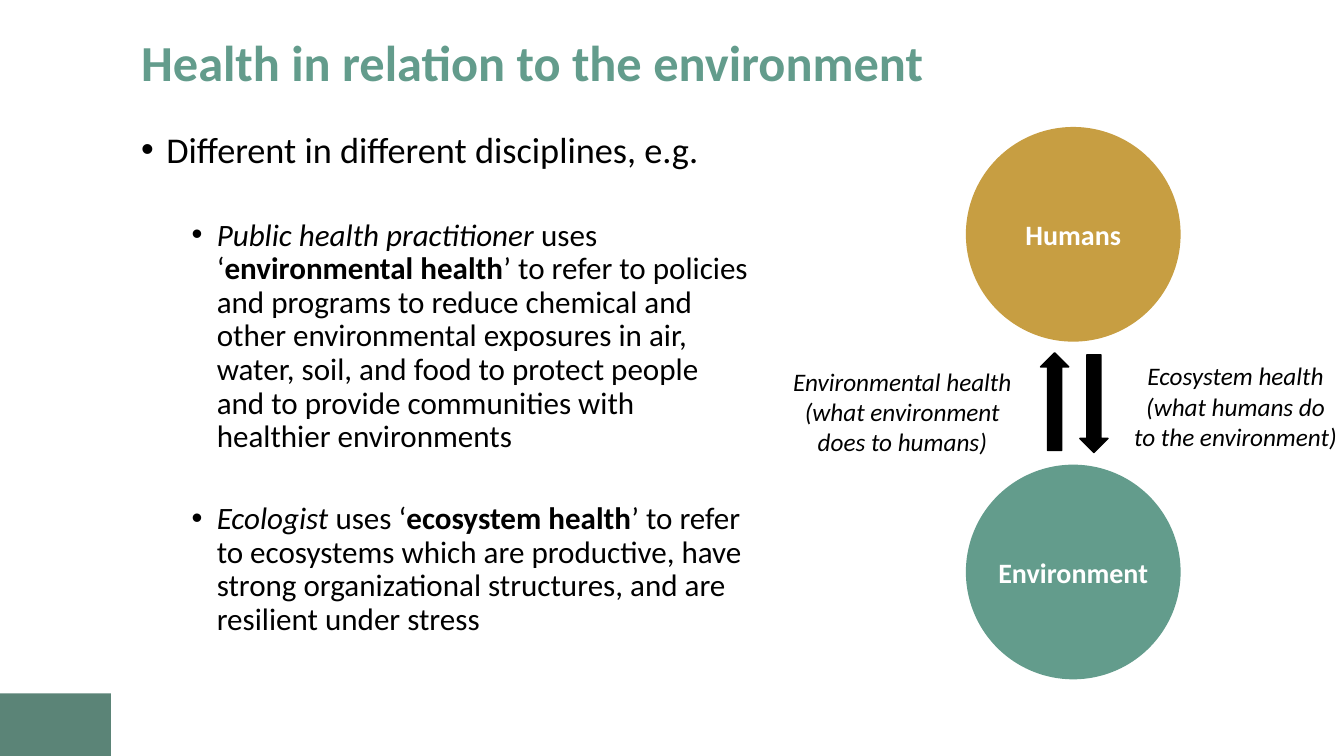
import pptx
import pptx.util
import pptx.dml.color
import pptx.enum.shapes
import pptx.enum.text
import pptx.oxml.ns
import lxml.etree
from dataclasses import dataclass

Inches, Pt = pptx.util.Inches, pptx.util.Pt
Kind = pptx.enum.shapes.MSO_SHAPE
Align = pptx.enum.text.PP_ALIGN
Anchor = pptx.enum.text.MSO_ANCHOR
Fit = pptx.enum.text.MSO_AUTO_SIZE

# Content
TITLE = "Health in relation to the environment"
# Each point: level, space before, runs of (text, style); b = bold, i = italic
POINTS = [
    (0, 0, [("Different in different disciplines, e.g.", "")]),
    (1, 34.4, [
        ("Public health practitioner ", "i"),
        ("uses ‘", ""),
        ("environmental health", "b"),
        ("’ to refer to policies and programs to reduce chemical and other "
         "environmental exposures in air, water, soil, and food to protect "
         "people and to provide communities with healthier environments", ""),
    ]),
    (1, 34.4, [
        ("Ecologist", "i"),
        (" uses ‘", ""),
        ("ecosystem health", "b"),
        ("’ to refer to ecosystems which are productive, have strong "
         "organizational structures, and are resilient under stress", ""),
    ]),
]
LABELS = [
    ((10.97, 3.53, 2.57, 1.01),
     ["Ecosystem health", "(what humans do", "to the environment)"]),
    ((7.25, 3.58, 3.4, 1.01),
     ["Environmental health", "(what environment", "does to humans)"]),
]


@dataclass
class Theme:
    font: str = "Calibri"
    green: str = "639C8C"
    dark: str = "5B8477"
    gold: str = "C79E42"
    black: str = "000000"
    white: str = "FFFFFF"
    title: float = 36
    body: tuple = (25.9, 22.2)
    node: float = 20
    label: float = 18


theme = Theme()
CIRCLES = [("Humans", 1.26, theme.gold), ("Environment", 4.61, theme.green)]
ARROWS = [(Kind.UP_ARROW, 10.32, 3.5), (Kind.DOWN_ARROW, 10.71, 3.52)]


def rgb(code):
    return pptx.dml.color.RGBColor.from_string(code)


def place(shape, box):
    shape.left, shape.top, shape.width, shape.height = map(Inches, box)


def style(run, size, color, bold=False, italic=False):
    font = run.font
    font.name, font.size = theme.font, Pt(size)
    font.bold, font.italic = bold, italic
    font.color.rgb = rgb(color)


def draw(kind, box, fill, line=None):
    shape = slide.shapes.add_shape(kind, *map(Inches, box))
    shape.shadow.inherit = False
    shape.fill.solid()
    shape.fill.fore_color.rgb = rgb(fill)
    if line:
        shape.line.color.rgb = rgb(line)
        shape.line.width = Pt(1)
    else:
        shape.line.fill.background()
    return shape


def bullet(para, level):
    props = para._p.get_or_add_pPr()
    props.set("marL", str(Inches(0.25 + 0.5 * level)))
    props.set("indent", str(Inches(-0.25)))
    for tag, key, val in (("a:buFont", "typeface", "Arial"),
                          ("a:buChar", "char", "•")):
        lxml.etree.SubElement(props, pptx.oxml.ns.qn(tag)).set(key, val)


deck = pptx.Presentation()
deck.slide_width, deck.slide_height = Inches(13.33), Inches(7.5)
slide = deck.slides.add_slide(deck.slide_layouts[1])

# Corner block
draw(Kind.RECTANGLE, (0, 6.88, 1.1, 0.62), theme.dark)

# Title
title = slide.shapes.title
place(title, (1.3, 0.29, 11.11, 0.71))
frame = title.text_frame
frame.text = TITLE
frame.auto_size = Fit.NONE
frame.vertical_anchor = Anchor.MIDDLE
para = frame.paragraphs[0]
para.alignment, para.line_spacing = Align.LEFT, 0.9
style(para.runs[0], theme.title, theme.green, bold=True)

# Bulleted list
body = slide.placeholders[1]
place(body, (1.3, 1.26, 6.24, 5.5))
frame = body.text_frame
frame.auto_size = Fit.NONE
for num, (level, gap, parts) in enumerate(POINTS):
    para = frame.add_paragraph() if num else frame.paragraphs[0]
    para.level = level
    bullet(para, level)
    para.line_spacing, para.space_before = 0.9, Pt(gap)
    for text, look in parts:
        run = para.add_run()
        run.text = text
        style(run, theme.body[level], theme.black, look == "b", look == "i")

# Circles
for name, top, fill in CIRCLES:
    node = draw(Kind.OVAL, (9.58, top, 2.13, 2.13), fill)
    frame = node.text_frame
    frame.margin_left = frame.margin_right = 0
    frame.text = name
    frame.vertical_anchor = Anchor.MIDDLE
    para = frame.paragraphs[0]
    para.alignment = Align.CENTER
    style(para.runs[0], theme.node, theme.white, bold=True)

# Arrows between the circles
for kind, left, top in ARROWS:
    draw(kind, (left, top, 0.28, 0.97), theme.black, theme.black)

# Arrow labels
for box, lines in LABELS:
    frame = slide.shapes.add_textbox(*map(Inches, box)).text_frame
    frame.word_wrap = True
    frame.text = "\n".join(lines)
    for para in frame.paragraphs:
        para.alignment = Align.CENTER
        style(para.runs[0], theme.label, theme.black, italic=True)

deck.save("out.pptx")
